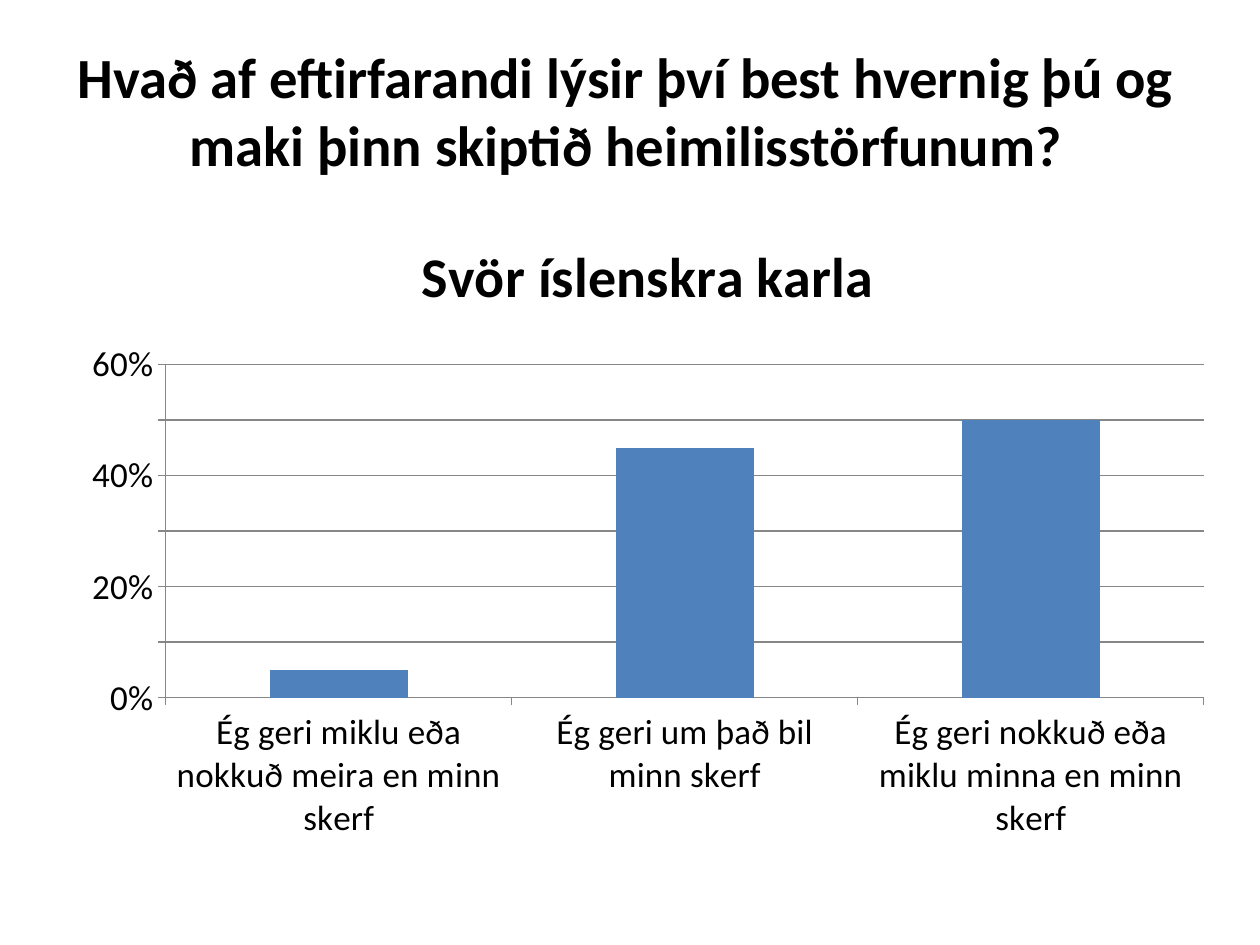
from pptx import Presentation
from pptx.chart.data import CategoryChartData
from pptx.dml.color import RGBColor
from pptx.enum.chart import XL_CHART_TYPE, XL_TICK_MARK
from pptx.enum.text import MSO_ANCHOR, MSO_AUTO_SIZE, PP_ALIGN
from pptx.util import Emu, Pt

# Content
TITLE = "Hvað af eftirfarandi lýsir því best hvernig þú og maki þinn skiptið heimilisstörfunum?"
CHART_TITLE = "Svör íslenskra karla"
ANSWERS = [
    ("Ég geri miklu eða nokkuð meira en minn skerf", 0.05),
    ("Ég geri um það bil minn skerf", 0.45),
    ("Ég geri nokkuð eða miklu minna en minn skerf", 0.5),
]

# Layout in px and style
PX = 914400 // 126
SLIDE = (1260, 945)
TITLE_BOX = (59, 36, 1134, 148)
CHART_BOX = (69, 207, 1158, 646)
FONT = "Calibri"
BLACK = RGBColor(0x00, 0x00, 0x00)
WHITE = RGBColor(0xFF, 0xFF, 0xFF)
BLUE = RGBColor(0x4F, 0x81, 0xBD)
GREY = RGBColor(0x87, 0x87, 0x87)


def px(values):
    return [Emu(v * PX) for v in values]


def set_font(font, size, bold=False):
    font.name, font.size, font.bold = FONT, Pt(size), bold
    font.color.rgb = BLACK


def write(tf, text, size, bold=False, align=PP_ALIGN.CENTER):
    p = tf.paragraphs[0]
    p.alignment = align
    r = p.add_run()
    r.text = text
    set_font(r.font, size, bold)


prs = Presentation()
prs.slide_width, prs.slide_height = px(SLIDE)
s = prs.slides.add_slide(prs.slide_layouts[5])
s.background.fill.solid()
s.background.fill.fore_color.rgb = WHITE

# Title
title = s.shapes.title
title.left, title.top, title.width, title.height = px(TITLE_BOX)
tf = title.text_frame
tf.word_wrap = True
tf.auto_size = MSO_AUTO_SIZE.NONE
tf.vertical_anchor = MSO_ANCHOR.MIDDLE
write(tf, TITLE, 32.4, bold=True)

# Column chart
data = CategoryChartData(number_format="0%")
data.categories = [answer for answer, _ in ANSWERS]
data.add_series("Series 1", [share for _, share in ANSWERS])
chart = s.shapes.add_chart(XL_CHART_TYPE.COLUMN_CLUSTERED, *px(CHART_BOX), data).chart
set_font(chart.font, 10)
chart.has_legend = False
chart.has_title = True
write(chart.chart_title.text_frame, CHART_TITLE, 32, bold=True)
chart.chart_title.include_in_layout = False

plot = chart.plots[0]
plot.gap_width = 150
plot.vary_by_categories = False
fill = plot.series[0].format.fill
fill.solid()
fill.fore_color.rgb = BLUE

# Axes
values = chart.value_axis
values.minimum_scale, values.maximum_scale, values.major_unit = 0, 0.6, 0.1
values.has_major_gridlines = True
values.tick_labels.number_format = "0%"
values.tick_labels.number_format_is_linked = False
for axis in (chart.category_axis, values):
    axis.major_tick_mark = XL_TICK_MARK.OUTSIDE
    set_font(axis.tick_labels.font, 20)
for part in (chart.category_axis, values, values.major_gridlines):
    part.format.line.color.rgb = GREY
    part.format.line.width = Pt(0.75)

prs.save("out.pptx")
